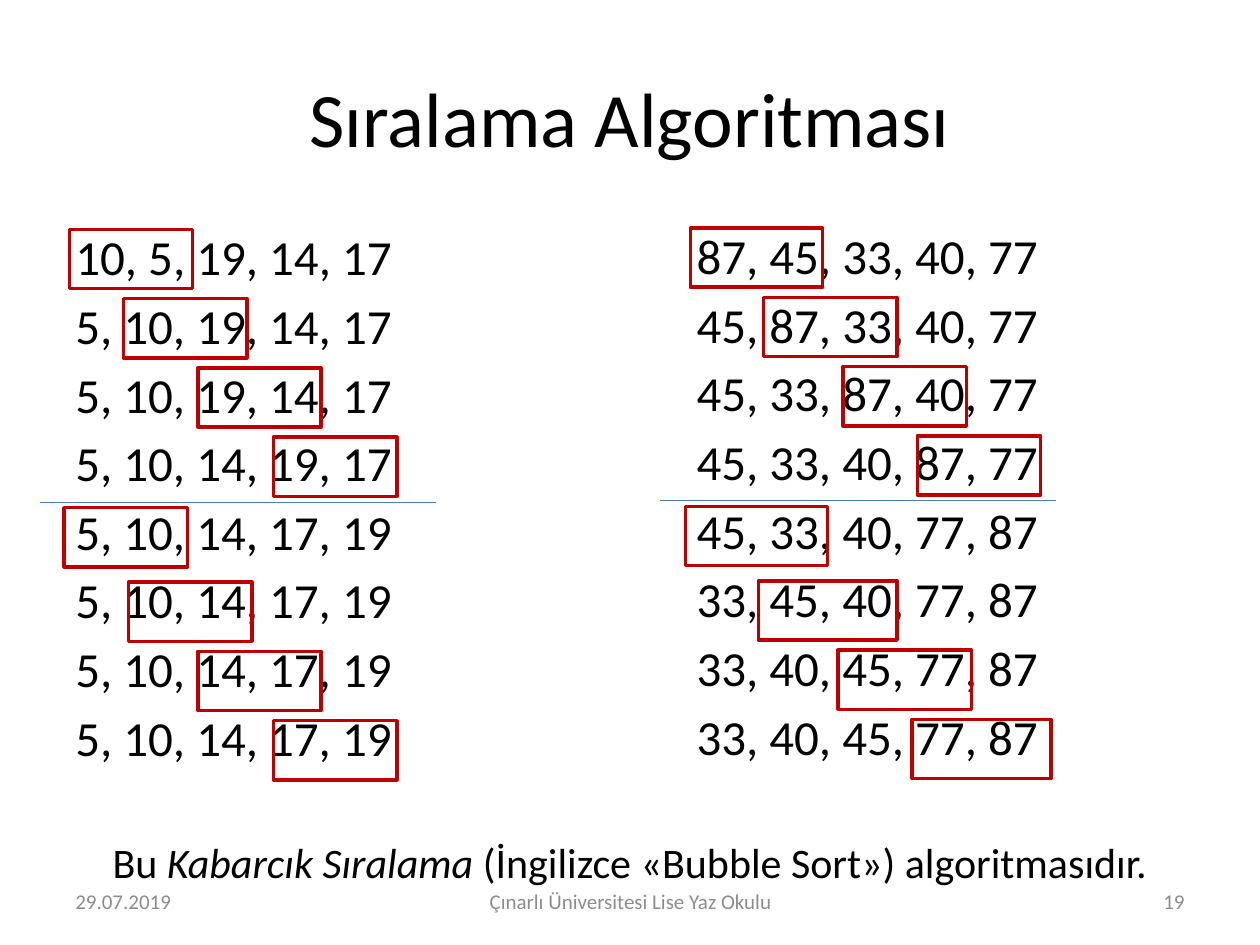
from dataclasses import dataclass

from lxml.etree import SubElement
from pptx import Presentation
from pptx.dml.color import RGBColor
from pptx.enum.shapes import MSO_CONNECTOR, MSO_SHAPE
from pptx.enum.text import MSO_ANCHOR, PP_ALIGN
from pptx.oxml.ns import qn
from pptx.slide import Slide
from pptx.util import Inches, Pt


@dataclass(frozen=True)
class Theme:
    font: str = "Calibri"
    text: RGBColor = RGBColor(0, 0, 0)
    muted: RGBColor = RGBColor(0x8C, 0x8C, 0x8C)
    highlight: RGBColor = RGBColor(0xC0, 0, 0)
    divider: RGBColor = RGBColor(0x4B, 0x7E, 0xBC)
    title_size: int = 44
    body_size: int = 28
    note_size: int = 24
    footer_size: int = 12


@dataclass(frozen=True)
class Box:
    left: float
    top: float
    width: float
    height: float


@dataclass(frozen=True)
class Run:
    text: str
    italic: bool = False


@dataclass(frozen=True)
class SortColumn:
    numbers: tuple[int, ...]
    text_left: float
    divider_left: float
    rise: float  # how far the column sits above the common grid
    marks: tuple[tuple[float, float], ...]  # left and width of each compared pair


THEME = Theme()
PASSES = 2
ROW_SPACE = 0.2 * THEME.body_size  # a fifth of the type size before each row
MARK_HEIGHT = 0.47
MARK_STEP = 0.55
MARK_TOPS = [1.82 + MARK_STEP * row for row in range(4)] + [4.03] + [
    4.62 + MARK_STEP * row for row in range(3)]
DIVIDER_TOP, DIVIDER_LENGTH = 3.99, 3.14

COLUMNS = (
    SortColumn((10, 5, 19, 14, 17), 0.5, 0.32, 0,
               tuple((left, 0.98) for left in
                     (0.55, 0.98, 1.57, 2.17, 0.51, 1.02, 1.57, 2.17))),
    SortColumn((87, 45, 33, 40, 77), 5.43, 5.24, 0.01,
               ((5.48, 1.05), (6.06, 1.06), (6.69, 0.98), (7.28, 0.98),
                (5.44, 1.13), (6.02, 1.1), (6.65, 1.06), (7.24, 1.1))),
)


def set_values(target: object, values: dict) -> None:
    for name, value in values.items():
        setattr(target, name, value)


def add_text(slide: Slide, box: Box, lines: list[list[Run]], size: int,
             color: RGBColor = THEME.text, align: PP_ALIGN = PP_ALIGN.LEFT,
             anchor: MSO_ANCHOR = MSO_ANCHOR.MIDDLE, space_before: float = 0) -> None:
    shape = slide.shapes.add_textbox(Inches(box.left), Inches(box.top),
                                     Inches(box.width), Inches(box.height))
    frame = shape.text_frame
    set_values(frame, {"word_wrap": True, "vertical_anchor": anchor})
    for index, line in enumerate(lines):
        paragraph = frame.add_paragraph() if index else frame.paragraphs[0]
        set_values(paragraph, {"alignment": align, "space_before": Pt(space_before)})
        for part in line:
            run = paragraph.add_run()
            run.text = part.text
            set_values(run.font, {"name": THEME.font, "size": Pt(size),
                                  "italic": part.italic})
            run.font.color.rgb = color


def bubble_sort_states(numbers: tuple[int, ...]) -> list[str]:
    """The sequence as it stands before each comparison."""
    values, states = list(numbers), []
    for _ in range(PASSES):
        for i in range(len(values) - 1):
            states.append(", ".join(map(str, values)))
            values[i:i + 2] = sorted(values[i:i + 2])
    return states


def add_mark(slide: Slide, box: Box) -> None:
    shape = slide.shapes.add_shape(MSO_SHAPE.RECTANGLE, Inches(box.left), Inches(box.top),
                                   Inches(box.width), Inches(box.height))
    shape.shadow.inherit = False
    shape.fill.background()
    shape.line.color.rgb = THEME.highlight
    shape.line.width = Pt(2)


def add_divider(slide: Slide, left: float, top: float) -> None:
    line = slide.shapes.add_connector(MSO_CONNECTOR.STRAIGHT, Inches(left), Inches(top),
                                      Inches(left + DIVIDER_LENGTH), Inches(top))
    line.line.color.rgb = THEME.divider
    line.line.width = Pt(0.75)
    SubElement(line._element.spPr, qn("a:effectLst"))


def add_sort_column(slide: Slide, column: SortColumn) -> None:
    lines = [[Run(state)] for state in bubble_sort_states(column.numbers)]
    add_text(slide, Box(column.text_left, 1.75 - column.rise, 3.52, 5.15), lines,
             THEME.body_size, anchor=MSO_ANCHOR.TOP, space_before=ROW_SPACE)
    for (left, width), top in zip(column.marks, MARK_TOPS):
        add_mark(slide, Box(left, top - column.rise, width, MARK_HEIGHT))
    add_divider(slide, column.divider_left, DIVIDER_TOP - 2 * column.rise)


def main() -> None:
    presentation = Presentation()
    set_values(presentation, {"slide_width": Inches(10), "slide_height": Inches(7.5)})
    slide = presentation.slides.add_slide(presentation.slide_layouts[6])

    # Title
    add_text(slide, Box(0.5, 0.3, 9, 1.25), [[Run("Sıralama Algoritması")]],
             THEME.title_size, align=PP_ALIGN.CENTER)

    # Worked examples
    for column in COLUMNS:
        add_sort_column(slide, column)

    # Closing remark
    remark = [Run("Bu "), Run("Kabarcık Sıralama", italic=True),
              Run(" (İngilizce «Bubble Sort») algoritmasıdır.")]
    add_text(slide, Box(0.32, 6.59, 9.36, 0.5), [remark], THEME.note_size,
             align=PP_ALIGN.CENTER, anchor=MSO_ANCHOR.TOP)

    # Footer
    for text, left, width, align in (
            ("29.07.2019", 0.5, 2.33, PP_ALIGN.LEFT),
            ("Çınarlı Üniversitesi Lise Yaz Okulu", 3.42, 3.17, PP_ALIGN.CENTER),
            ("19", 7.17, 2.33, PP_ALIGN.RIGHT)):
        add_text(slide, Box(left, 6.95, width, 0.4), [[Run(text)]],
                 THEME.footer_size, THEME.muted, align)

    presentation.save("out.pptx")


if __name__ == "__main__":
    main()
